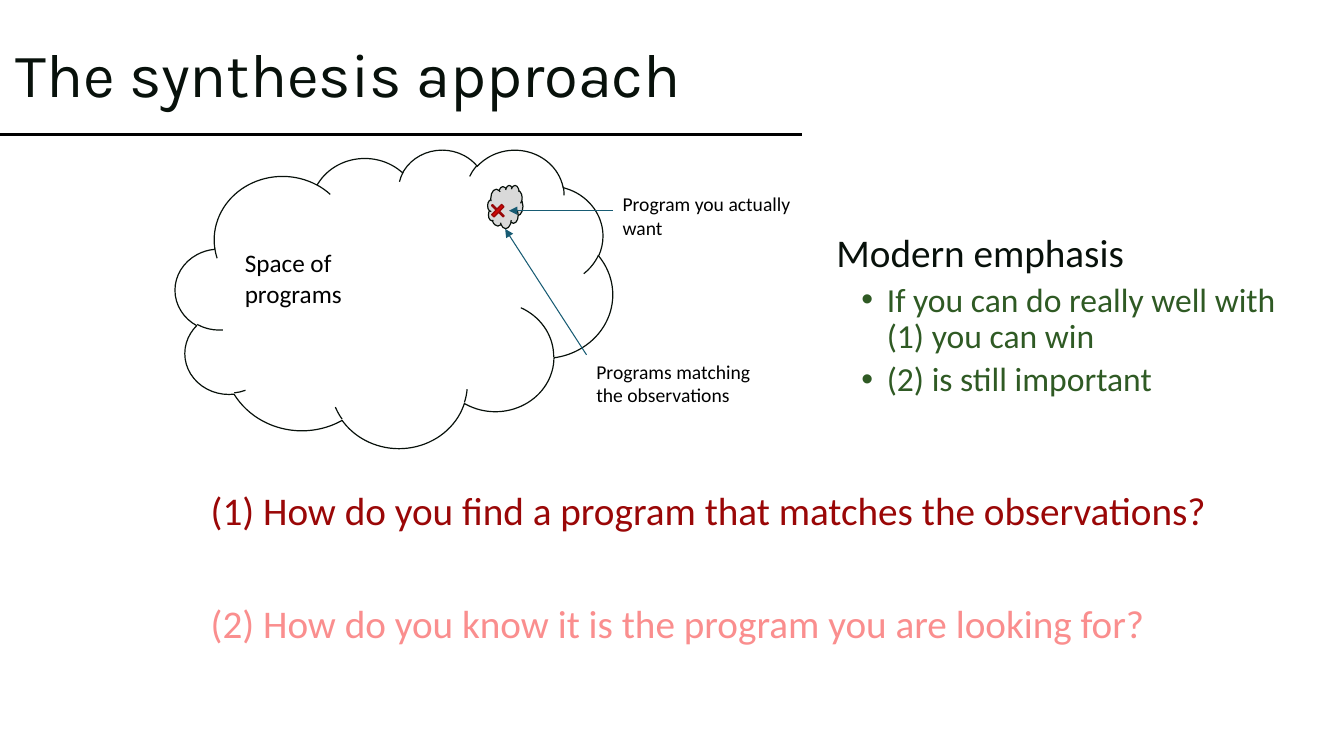
from lxml.etree import SubElement
from pptx import Presentation
from pptx.dml.color import RGBColor
from pptx.enum.shapes import MSO_CONNECTOR as CONN, MSO_SHAPE as SHAPE
from pptx.enum.text import MSO_ANCHOR as ANCHOR
from pptx.oxml.ns import qn
from pptx.util import Cm, Pt

INK, BLACK, GREEN, TEAL = "08110B", "000000", "2F5A24", "175B73"
RED, PINK = "9A0707", "FA8E8E"


def rgb(color):
    return RGBColor.from_string(color)


def add_paragraph(tf, text, size=14, color=BLACK, font="Calibri", spacing=None,
                  before=0, left=0, hanging=0, bullet=None):
    """Fill the first paragraph if it is empty, otherwise append one; indents in cm."""
    p = tf.paragraphs[0] if not tf.paragraphs[0].runs else tf.add_paragraph()
    p.space_before = Pt(before)
    if spacing:
        p.line_spacing = spacing
    r = p.add_run()
    r.text = text
    r.font.name, r.font.size = font, Pt(size)
    r.font.color.rgb = rgb(color)
    pPr = p._p.get_or_add_pPr()
    pPr.set("marL", str(Cm(left)))
    pPr.set("indent", str(Cm(-hanging)))
    if bullet:
        SubElement(pPr, qn("a:buFont")).set("typeface", "Arial")
        SubElement(pPr, qn("a:buChar")).set("char", bullet)
    else:
        SubElement(pPr, qn("a:buNone"))


class SlideBuilder:
    def __init__(self, prs):
        self.s = prs.slides.add_slide(prs.slide_layouts[6])

    def text(self, box, *paragraphs, anchor=ANCHOR.TOP, **style):
        """Each paragraph is a (text, own format) pair laid over the common style."""
        tf = self.s.shapes.add_textbox(*map(Cm, box)).text_frame
        tf.word_wrap = True
        tf.vertical_anchor = anchor
        for text, own in paragraphs:
            add_paragraph(tf, text, **{**style, **own})

    def shape(self, kind, box, fill, line=INK):
        sp = self.s.shapes.add_shape(kind, *map(Cm, box))
        sp.shadow.inherit = False
        sp.fill.solid()
        sp.fill.fore_color.rgb = rgb(fill)
        sp.line.color.rgb = rgb(line)
        sp.line.width = Pt(0.85)
        return sp

    def line(self, start, end, color=BLACK, width=2.25, arrow=False):
        c = self.s.shapes.add_connector(CONN.STRAIGHT, *map(Cm, start + end))
        c.line.color.rgb = rgb(color)
        c.line.width = Pt(width)
        if arrow:
            SubElement(c.line._get_or_add_ln(), qn("a:tailEnd")).set("type", "triangle")
        SubElement(c._element.spPr, qn("a:effectLst"))


def main():
    prs = Presentation()
    prs.slide_width, prs.slide_height = Cm(33.87), Cm(19.05)
    b = SlideBuilder(prs)

    b.line((0, 3.38), (20.22, 3.38))
    b.text((0.15, 0.08, 23.44, 3.76), ("The synthesis approach", {}),
           anchor=ANCHOR.MIDDLE, size=44, color=INK, font="Karla", spacing=0.9)
    b.text((4.42, 12.27, 27.13, 4.9),
           ("(1) How do you find a program that matches the observations?",
            {"color": RED, "before": 10}),
           ("(2) How do you know it is the program you are looking for?",
            {"color": PINK, "before": 50.5}),
           size=28, spacing=0.9, left=0.64, hanging=0)

    b.shape(SHAPE.CLOUD, (4.42, 3.76, 11.02, 7.52), "FFFFFF")
    b.text((5.92, 6.12, 4.75, 1.8), ("Space of programs", {}), size=18)
    b.shape(SHAPE.CLOUD, (12.29, 4.67, 0.89, 1.09), "D9D9D9")
    target = b.shape(SHAPE.CROSS, (12.34, 5.13, 0.41, 0.36), "CD0909", "980707")
    target.adjustments[0] = 0.45
    target.rotation = 43.9

    b.text((14.78, 8.94, 4.75, 1.45), ("Programs matching the observations", {}))
    b.line((15.44, 5.31), (12.83, 5.31), TEAL, 0.75, arrow=True)
    b.text((15.44, 4.72, 4.75, 1.45), ("Program you actually want", {}))

    point = {"size": 24, "color": GREEN, "before": 5, "left": 1.91,
             "hanging": 0.64, "bullet": "•"}
    b.text((20.19, 5.77, 13.28, 4.9),
           ("Modern emphasis", {"size": 28, "color": INK, "before": 10, "left": 0.64}),
           ("If you can do really well with (1) you can win", point),
           ("(2) is still important", point),
           spacing=0.9)
    b.line((14.78, 8.94), (12.73, 5.77), TEAL, 0.75, arrow=True)

    prs.save("out.pptx")


if __name__ == "__main__":
    main()
